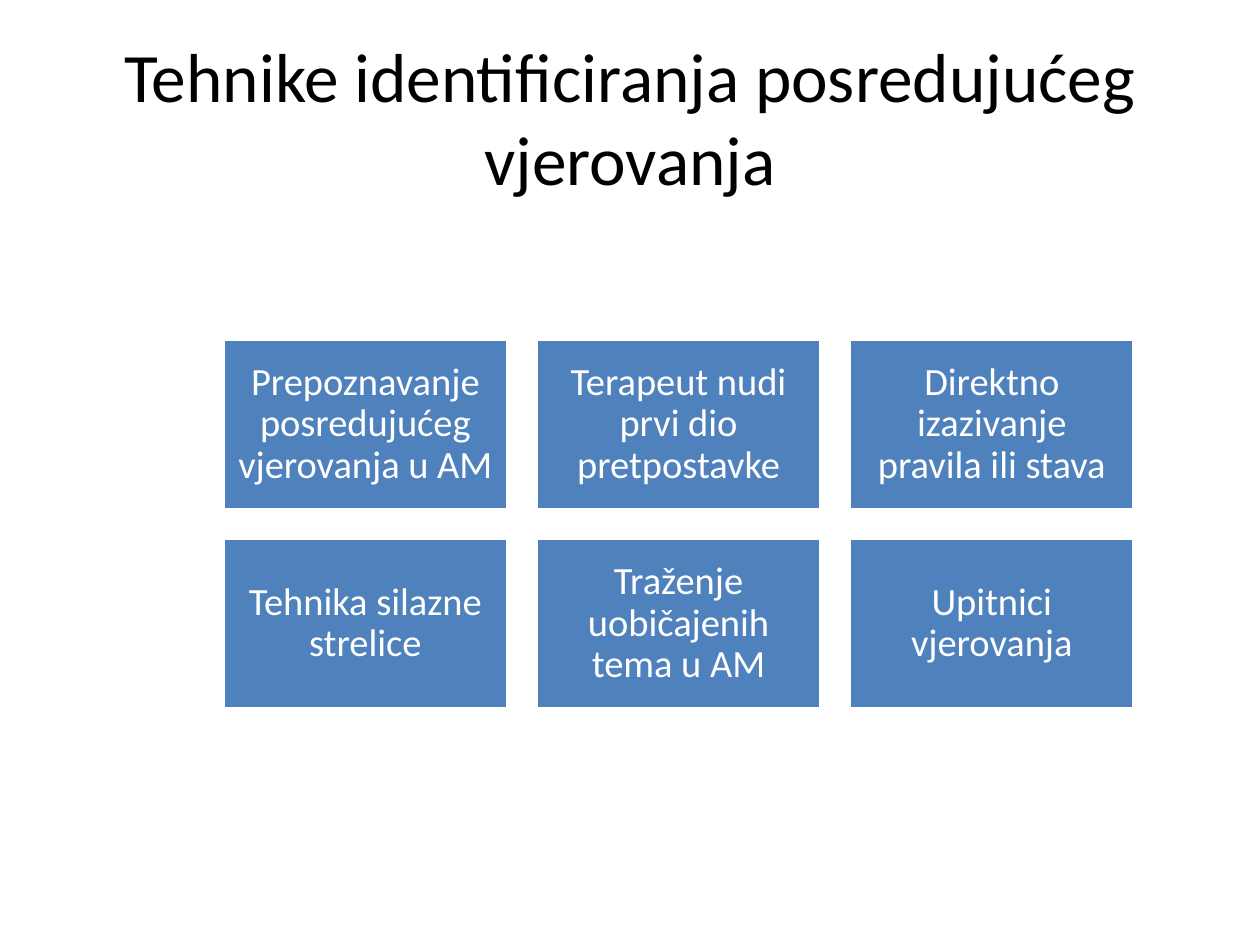
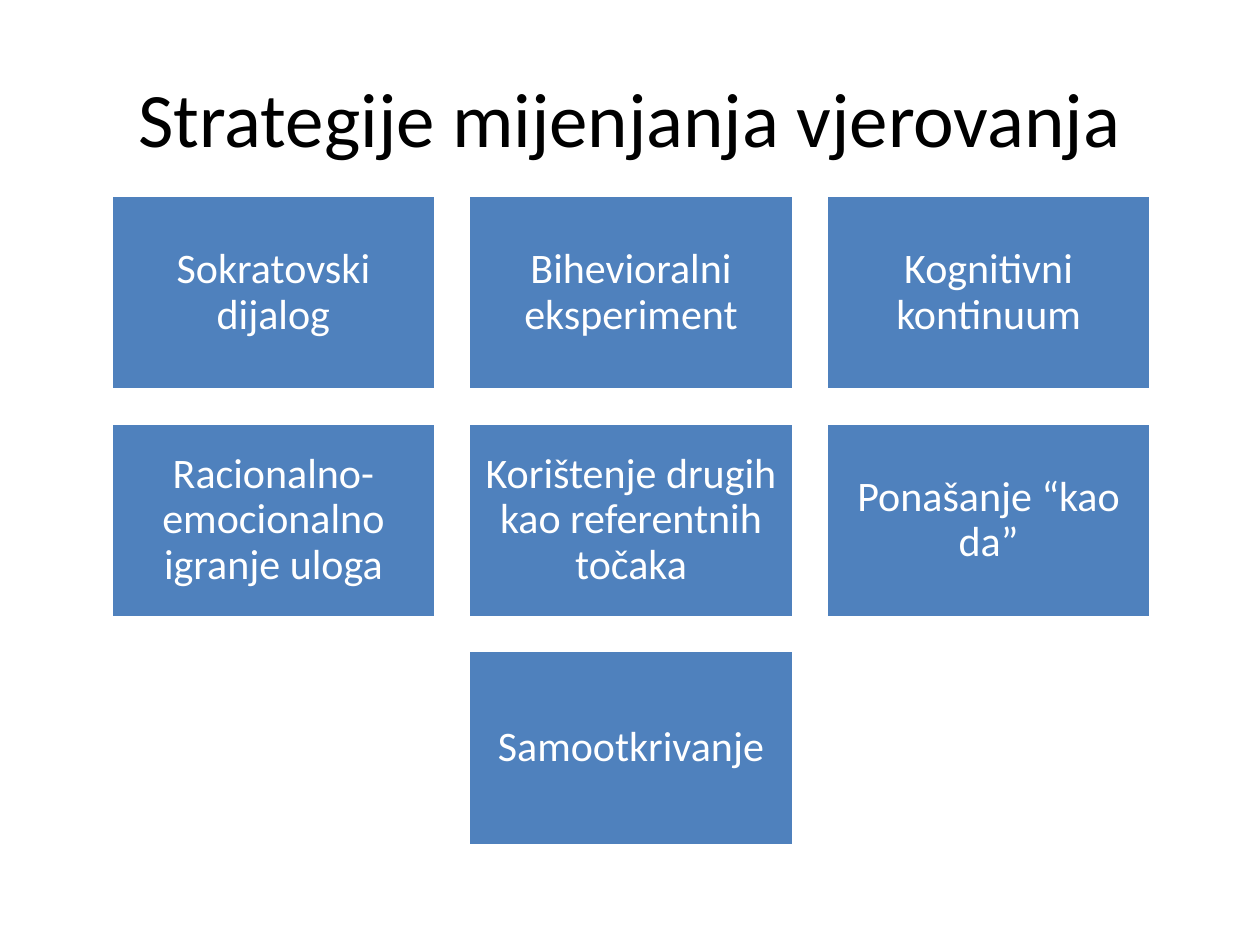
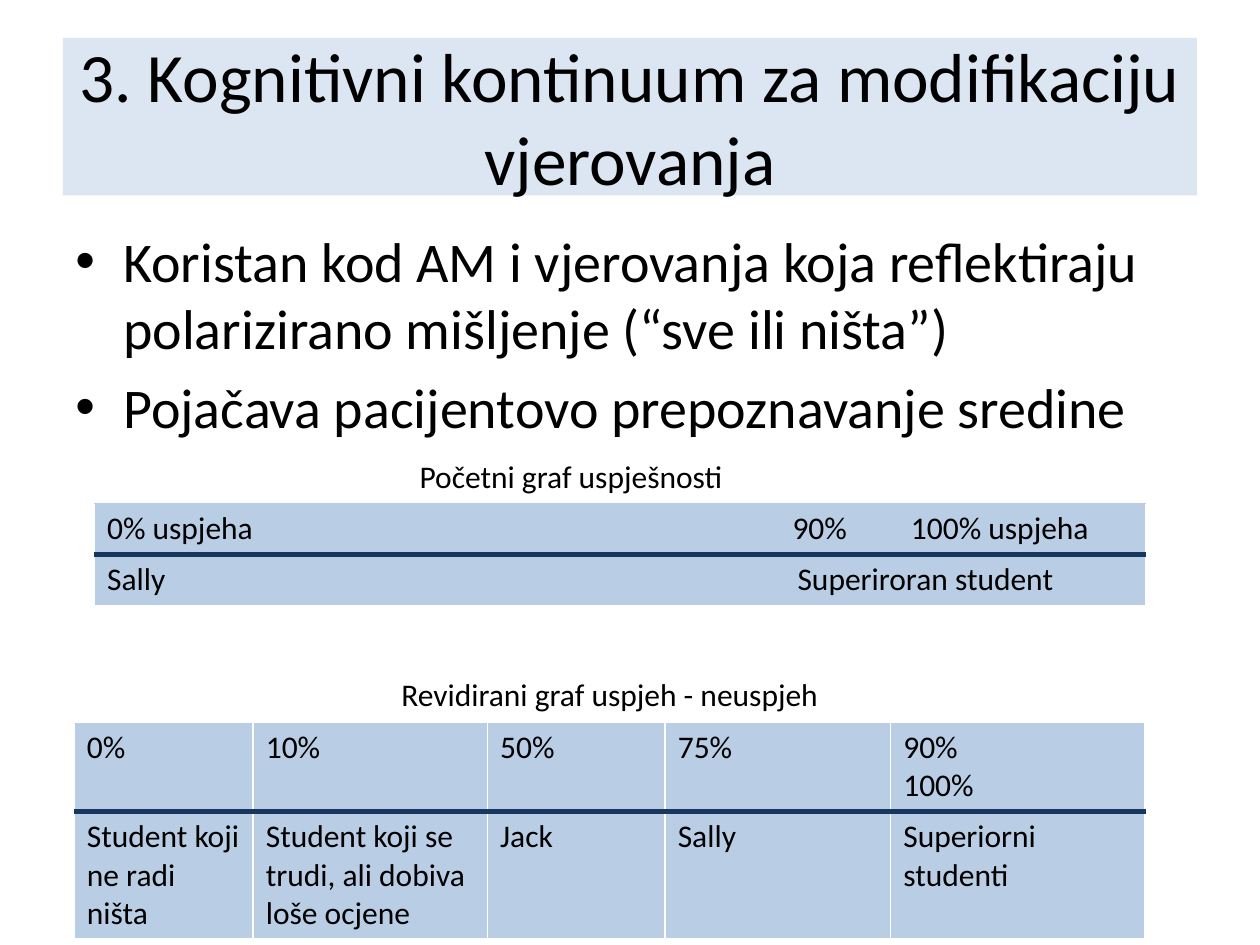
from lxml.etree import SubElement
from pptx import Presentation
from pptx.dml.color import RGBColor
from pptx.enum.shapes import MSO_SHAPE
from pptx.enum.text import MSO_ANCHOR, PP_ALIGN
from pptx.oxml.ns import qn
from pptx.util import Inches, Pt

WHITE = RGBColor(0xFF, 0xFF, 0xFF)
BLACK = RGBColor(0x00, 0x00, 0x00)
BLUE = RGBColor(0x4F, 0x81, 0xBD)
PALE = RGBColor(0xDC, 0xE6, 0xF2)
SKY = RGBColor(0xB9, 0xCD, 0xE5)
NAVY = RGBColor(0x17, 0x37, 0x5E)

FONT = "Calibri"
COLS, ROWS = 100, 75
THIN, THICK = 1, 3


def put(frame, text, size=18, color=BLACK, align=PP_ALIGN.LEFT, lead=None,
        gap=0, indent=0, bullet=None, tabs=()):
    """Fill a text frame; a list gives one paragraph per item."""
    frame.word_wrap = True
    for i, line in enumerate([text] if isinstance(text, str) else text):
        para = frame.add_paragraph() if i else frame.paragraphs[0]
        para.text = line
        para.alignment = align
        props = para._p.get_or_add_pPr()
        if indent:
            props.set("marL", str(Inches(indent)))
        if bullet:
            props.set("indent", str(-Inches(indent)))
            SubElement(props, qn("a:buFont"), typeface="Arial")
            SubElement(props, qn("a:buChar"), char=bullet)
        if tabs:
            stops = SubElement(props, qn("a:tabLst"))
            for stop in tabs:
                SubElement(stops, qn("a:tab"), pos=str(Inches(stop)), algn="l")
        if lead:
            para.line_spacing = lead
        if i:
            para.space_before = Pt(gap)
        for run in para.runs:
            run.font.name = FONT
            run.font.size = Pt(size)
            run.font.color.rgb = color


def edge(cell, side, color, width):
    """Draw one border of a cell; side is L, R, T or B."""
    props = cell._tc.get_or_add_tcPr()
    line = SubElement(props, qn("a:ln" + side), w=str(Pt(width)))
    fill = SubElement(line, qn("a:solidFill"))
    SubElement(fill, qn("a:srgbClr"), val=str(color))
    props.insert("LRTB".index(side), line)


class Deck:
    def __init__(self):
        self.prs = Presentation()
        self.prs.slide_width = Inches(10)
        self.prs.slide_height = Inches(7.5)
        self.slide = None

    def x(self, cols):
        return round(self.prs.slide_width * cols / COLS)

    def y(self, rows):
        return round(self.prs.slide_height * rows / ROWS)

    def place(self, left, top, width, height):
        return self.x(left), self.y(top), self.x(width), self.y(height)

    def page(self, title, size=39.6, band=None):
        """Start a slide with its title, on a band if a colour is given."""
        self.slide = self.prs.slides.add_slide(self.prs.slide_layouts[6])
        box = self.text(title, 5, 3, 90, 12.5, size=size, align=PP_ALIGN.CENTER)
        box.text_frame.vertical_anchor = MSO_ANCHOR.MIDDLE
        if band:
            box.fill.solid()
            box.fill.fore_color.rgb = band

    def text(self, text, *area, **style):
        box = self.slide.shapes.add_textbox(*self.place(*area))
        put(box.text_frame, text, **style)
        return box

    def tile(self, text, *area, size, pad):
        box = self.slide.shapes.add_shape(MSO_SHAPE.RECTANGLE, *self.place(*area))
        box.shadow.inherit = False
        box.fill.solid()
        box.fill.fore_color.rgb = BLUE
        box.line.color.rgb = WHITE
        box.line.width = Pt(2)
        frame = box.text_frame
        frame.margin_left = frame.margin_right = self.x(pad)
        frame.margin_top = frame.margin_bottom = self.y(pad)
        frame.vertical_anchor = MSO_ANCHOR.MIDDLE
        put(frame, text, size=size, color=WHITE, align=PP_ALIGN.CENTER, lead=0.9)

    def tiles(self, names, left, top, width, size, pad, across=3):
        """Lay tiles in rows, the last row centred."""
        gap, high = width * 0.1, width * 0.6
        for i, name in enumerate(names):
            row, col = divmod(i, across)
            count = min(across, len(names) - row * across)
            col += (across - count) / 2
            self.tile(name, left + col * (width + gap), top + row * (high + gap),
                      width, high, size=size, pad=pad)

    def table(self, rows, left, top, widths, heights, rules, styles):
        """Add a table with a white head row; a row of one item spans it all."""
        area = self.place(left, top, sum(widths), sum(heights))
        grid = self.slide.shapes.add_table(len(rows), len(widths), *area).table
        grid.first_row = grid.horz_banding = False
        for col, width in zip(grid.columns, widths):
            col.width = self.x(width)
        for r, (row, style) in enumerate(zip(rows, styles)):
            grid.rows[r].height = self.y(heights[r])
            for c in range(len(widths)):
                cell = grid.cell(r, c)
                cell.fill.solid()
                cell.fill.fore_color.rgb = SKY if r else WHITE
                for side, rule in zip("LRTB", [(WHITE, THIN)] * 2 + rules[r:r + 2]):
                    edge(cell, side, *rule)
            if len(row) == 1:
                grid.cell(r, 0).merge(grid.cell(r, len(widths) - 1))
            for c, text in enumerate(row):
                put(grid.cell(r, c).text_frame, text, **style)


def main():
    deck = Deck()
    plain, axis = (WHITE, THIN), (NAVY, THICK)

    deck.page("Tehnike identificiranja posredujućeg vjerovanja")
    deck.tiles(["Prepoznavanje posredujućeg vjerovanja u AM",
                "Terapeut nudi prvi dio pretpostavke",
                "Direktno izazivanje pravila ili stava",
                "Tehnika silazne strelice",
                "Traženje uobičajenih tema u AM",
                "Upitnici vjerovanja"],
               left=17.7, top=26.9, width=22.6, size=22, pad=0.9)

    deck.page("Strategije mijenjanja vjerovanja", size=44)
    deck.tiles(["Sokratovski dijalog", "Bihevioralni eksperiment",
                "Kognitivni kontinuum",
                "Racionalno-emocionalno igranje uloga",
                "Korištenje drugih kao referentnih točaka",
                "Ponašanje “kao da”", "Samootkrivanje"],
               left=8.8, top=15.5, width=25.8, size=24, pad=1)

    deck.page("3. Kognitivni kontinuum za modifikaciju vjerovanja", band=PALE)
    deck.text(["Koristan kod AM i vjerovanja koja reflektiraju polarizirano "
               "mišljenje (“sve ili ništa”)",
               "Pojačava pacijentovo prepoznavanje sredine"],
              5, 17.5, 90, 49.5, size=32, gap=6.4, indent=0.38, bullet="•")
    deck.table([["", "Početni graf uspješnosti", ""],
                ["0% uspjeha\t90%\t100% uspjeha"],
                ["Sally\tSuperiroran student"]],
               left=7.5, top=35.9, widths=[22, 37, 24.4], heights=[4.06] * 3,
               rules=[plain, (SKY, THIN), axis, plain],
               styles=[dict(indent=0.28), dict(tabs=[5.44, 6.38]),
                       dict(tabs=[5.48])])
    deck.table([["Revidirani graf uspjeh - neuspjeh"],
                ["0%", "10%", "50%", "75%", "90%\n100%"],
                ["Student koji ne radi ništa",
                 "Student koji se trudi, ali dobiva loše ocjene",
                 "Jack", "Sally", "Superiorni studenti"]],
               left=5.9, top=53.2, widths=[14.2, 18.6, 14.1, 17.9, 20.2],
               heights=[4.1, 7.1, 10.1], rules=[plain, plain, axis, plain],
               styles=[dict(align=PP_ALIGN.CENTER), {}, {}])

    deck.prs.save("out.pptx")


if __name__ == "__main__":
    main()
